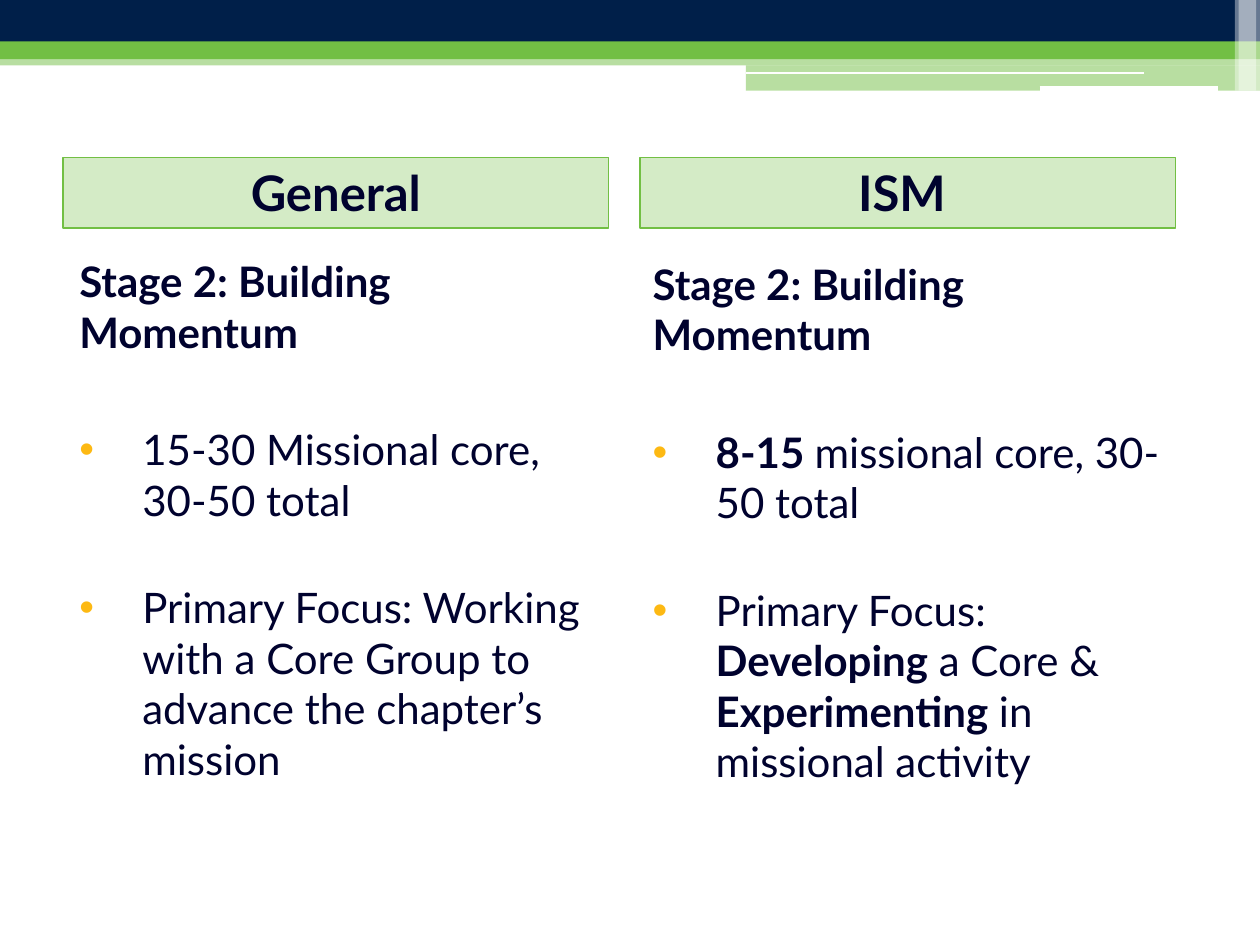
from lxml import etree
from pptx import Presentation
from pptx.dml.color import RGBColor
from pptx.enum.shapes import MSO_CONNECTOR, MSO_SHAPE
from pptx.enum.text import MSO_ANCHOR, MSO_AUTO_SIZE, PP_ALIGN
from pptx.oxml.ns import qn
from pptx.util import Inches, Pt

RECTANGLE = MSO_SHAPE.RECTANGLE
STRAIGHT = MSO_CONNECTOR.STRAIGHT
BOTTOM, TOP = MSO_ANCHOR.BOTTOM, MSO_ANCHOR.TOP
CENTER, LEFT = PP_ALIGN.CENTER, PP_ALIGN.LEFT
NO_FIT = MSO_AUTO_SIZE.NONE

NAVY, GREEN, WHITE = "001F49", "72BF44", "FFFFFF"
TEXT, GOLD = "00022E", "FDB913"
FONT = "Lato"
COMPARISON_LAYOUT = 4

STAGE = "Stage 2: Building Momentum"
COLUMNS = [
    {
        "heading": "General",
        "heading_box": (0.5, 1.25, 4.33, 0.56),
        "body_box": (0.53, 1.98, 4.31, 5.35),
        "bullets": [
            [("15-30 Missional core, 30-50 total", False)],
            [("Primary Focus: Working with a Core Group to advance "
              "the chapter’s mission", False)],
        ],
    },
    {
        "heading": "ISM ",
        "heading_box": (5.08, 1.25, 4.25, 0.56),
        "body_box": (5.08, 2, 4.25, 5.12),
        "bullets": [
            [("8-15 ", True), ("missional core, 30-50 total", False)],
            [("Primary Focus: ", False), ("Developing", True),
             (" a Core & ", False), ("Experimenting", True),
             (" in missional activity", False)],
        ],
    },
]
BULLET_GAPS = [38.4, 32.8]


def rgb(color):
    return RGBColor.from_string(color)


def set_fill(shape, color, opacity=100):
    shape.fill.solid()
    shape.fill.fore_color.rgb = rgb(color)
    if opacity < 100:
        color_element = shape.fill._xPr.find(qn("a:solidFill"))[0]
        etree.SubElement(color_element, qn("a:alpha"), val=str(opacity * 1000))


def place(shape, box):
    shape.left, shape.top, shape.width, shape.height = map(Inches, box)


def add_band(slide, box, color, opacity=100):
    band = slide.shapes.add_shape(RECTANGLE, *map(Inches, box))
    band.shadow.inherit = False
    set_fill(band, color, opacity)
    band.line.fill.background()


def add_rule(slide, start, end, top, width):
    rule = slide.shapes.add_connector(
        STRAIGHT, Inches(start), Inches(top), Inches(end), Inches(top))
    rule.line.color.rgb = rgb(WHITE)
    rule.line.width = Pt(width)
    etree.SubElement(rule._element.spPr, qn("a:effectLst"))


def add_banner(slide):
    add_band(slide, (0, 0.29, 10, 0.18), GREEN)
    add_band(slide, (0, 0.42, 10, 0.1), GREEN, 50)
    add_band(slide, (5.92, 0.52, 4.08, 0.2), GREEN, 50)
    add_band(slide, (0, 0, 10, 0.33), NAVY)
    add_rule(slide, 5.92, 9.08, 0.58, 1.5)
    add_rule(slide, 8.25, 9.67, 0.7, 3)
    for left in (9.83, 9.8):
        add_band(slide, (left, 0, 0.17, 0.72), WHITE, 40)


def set_bullet(paragraph, character=None):
    properties = paragraph._p.get_or_add_pPr()
    indent = Inches(0.5) if character else 0
    properties.set("marL", str(indent))
    properties.set("indent", str(-indent))
    if character:
        bullet_color = etree.SubElement(properties, qn("a:buClr"))
        etree.SubElement(bullet_color, qn("a:srgbClr"), val=GOLD)
        etree.SubElement(properties, qn("a:buFont"), typeface="Arial")
        etree.SubElement(properties, qn("a:buChar"), char=character)
    else:
        etree.SubElement(properties, qn("a:buNone"))


def write(paragraph, segments, size, align=LEFT, space_before=0):
    paragraph.alignment = align
    paragraph.space_before = Pt(space_before)
    for text, bold in segments:
        run = paragraph.add_run()
        run.text = text
        run.font.name = FONT
        run.font.size = Pt(size)
        run.font.bold = bold
        run.font.color.rgb = rgb(TEXT)


def prepare_frame(shape, anchor):
    frame = shape.text_frame
    frame.auto_size = NO_FIT
    frame.word_wrap = True
    frame.vertical_anchor = anchor
    return frame


def fill_heading(shape, text, box):
    place(shape, box)
    set_fill(shape, GREEN, 30)
    shape.line.color.rgb = rgb(GREEN)
    shape.line.width = Pt(0.75)
    paragraph = prepare_frame(shape, BOTTOM).paragraphs[0]
    set_bullet(paragraph)
    write(paragraph, [(text, True)], 28, CENTER)


def fill_body(shape, bullets, box):
    place(shape, box)
    frame = prepare_frame(shape, TOP)
    set_bullet(frame.paragraphs[0])
    write(frame.paragraphs[0], [(STAGE, True)], 24)
    for segments, gap in zip(bullets, BULLET_GAPS):
        paragraph = frame.add_paragraph()
        set_bullet(paragraph, "•")
        write(paragraph, segments, 24, space_before=gap)


def main():
    presentation = Presentation()
    presentation.slide_width = Inches(10)
    presentation.slide_height = Inches(7.5)
    slide = presentation.slides.add_slide(
        presentation.slide_layouts[COMPARISON_LAYOUT])
    title, *column_parts = slide.placeholders
    title._element.getparent().remove(title._element)
    add_banner(slide)
    for column, heading, body in zip(COLUMNS, column_parts[::2], column_parts[1::2]):
        fill_heading(heading, column["heading"], column["heading_box"])
        fill_body(body, column["bullets"], column["body_box"])
    presentation.save("out.pptx")


if __name__ == "__main__":
    main()
